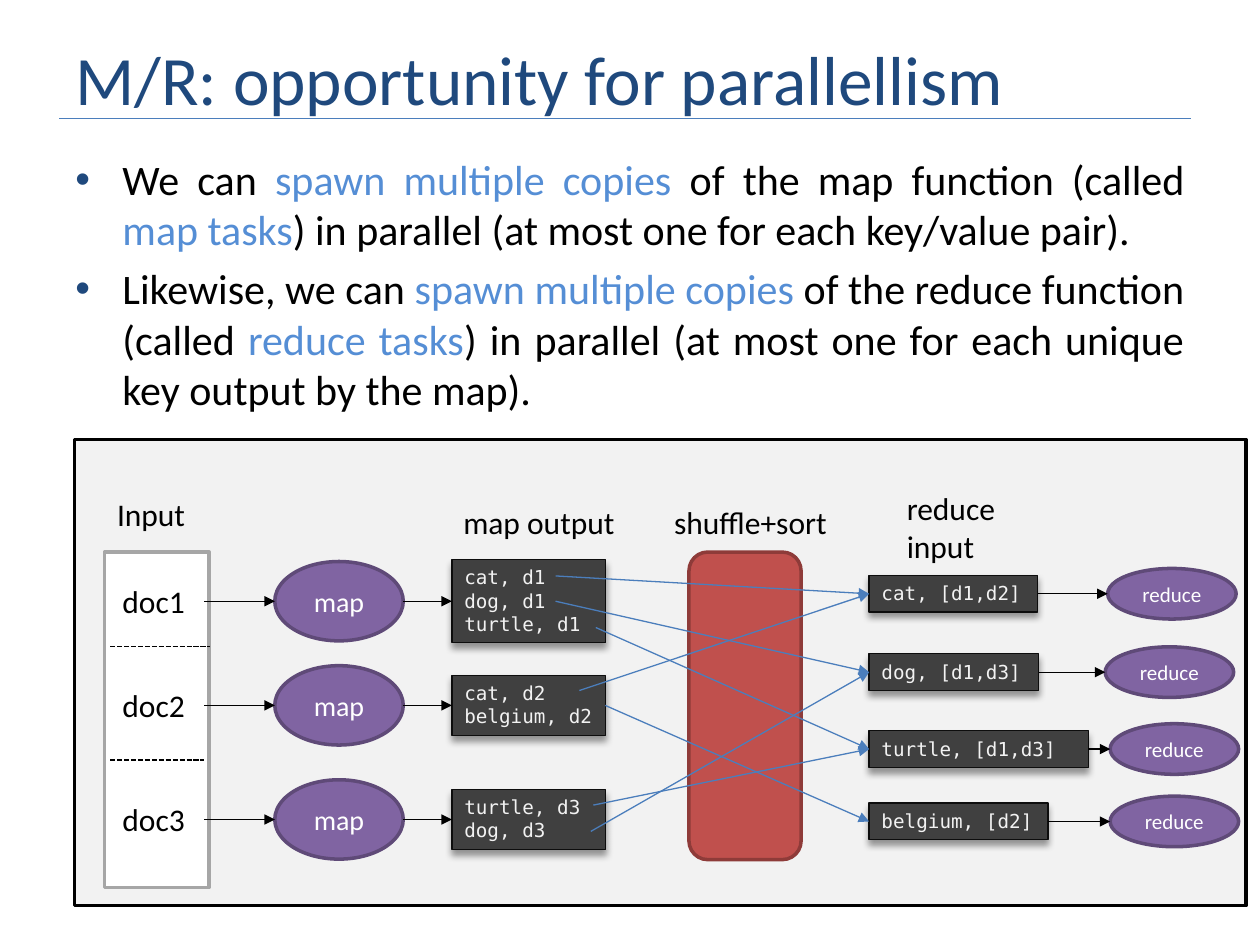
from dataclasses import dataclass
from typing import NamedTuple

from lxml.etree import SubElement
from pptx import Presentation
from pptx.dml.color import RGBColor
from pptx.enum.dml import MSO_LINE
from pptx.enum.shapes import MSO_CONNECTOR, MSO_SHAPE as Preset
from pptx.enum.text import MSO_ANCHOR as Anchor, MSO_AUTO_SIZE as AutoSize, PP_ALIGN as Align
from pptx.oxml.ns import qn
from pptx.util import Cm, Pt

BLACK = RGBColor(0x00, 0x00, 0x00)
WHITE = RGBColor(0xFF, 0xFF, 0xFF)
NAVY = RGBColor(0x1F, 0x49, 0x7D)
SKY = RGBColor(0x55, 0x8E, 0xD5)
BLUE = RGBColor(0x4B, 0x7E, 0xBC)
PALE = RGBColor(0xF2, 0xF2, 0xF2)
GREY = RGBColor(0xA6, 0xA6, 0xA6)
CHARCOAL = RGBColor(0x40, 0x40, 0x40)
INK = RGBColor(0x0D, 0x0D, 0x0D)
PURPLE = RGBColor(0x80, 0x64, 0xA2)
PLUM = RGBColor(0x5F, 0x4A, 0x78)
RED = RGBColor(0xC0, 0x50, 0x4D)
MAROON = RGBColor(0x8E, 0x3B, 0x39)
SANS, MONO = "Calibri", "DejaVu Sans Mono"


class Box(NamedTuple):
    left: float
    top: float
    width: float
    height: float


class Point(NamedTuple):
    x: float
    y: float


class Emission(NamedTuple):
    start: Point
    reducer: int


@dataclass(frozen=True)
class MapTask:
    doc: str
    middle: float
    pairs: tuple[str, ...]


@dataclass(frozen=True)
class ReduceTask:
    group: str
    middle: float
    group_width: float
    oval_left: float


MAP_TASKS = (
    MapTask("doc1", 12.12, ("cat, d1", "dog, d1", "turtle, d1")),
    MapTask("doc2", 14.22, ("cat, d2", "belgium, d2")),
    MapTask("doc3", 16.52, ("turtle, d3", "dog, d3")),
)
REDUCE_TASKS = (
    ReduceTask("cat, [d1,d2]", 11.97, 3.4, 22.33),
    ReduceTask("dog, [d1,d3]", 13.55, 3.42, 22.28),
    ReduceTask("turtle, [d1,d3]", 15.1, 4.42, 22.38),
    ReduceTask("belgium, [d2]", 16.56, 3.61, 22.38),
)
EMISSIONS = (
    Emission(Point(11.2, 11.61), 0),
    Emission(Point(11.2, 12.12), 1),
    Emission(Point(12.01, 12.65), 2),
    Emission(Point(11.68, 13.92), 0),
    Emission(Point(12.2, 14.22), 3),
    Emission(Point(11.96, 16.23), 2),
    Emission(Point(11.91, 16.76), 1),
)
HEADINGS = (
    (Box(2.11, 9.86, 3.81, 1.02), ("Input",)),
    (Box(9.09, 10.01, 4.19, 1.02), ("map output",)),
    (Box(13.34, 10.01, 4.19, 1.02), ("shuffle+sort",)),
    (Box(18.03, 9.73, 2.54, 1.8), ("reduce", "input")),
)
BULLETS = (
    (("We can ", BLACK), ("spawn multiple copies ", SKY), ("of the map function (called ", BLACK),
     ("map tasks", SKY), (") in parallel (at most one for each key/value pair).", BLACK)),
    (("Likewise, we can ", BLACK), ("spawn multiple copies", SKY),
     (" of the reduce function (called ", BLACK), ("reduce tasks", SKY),
     (") in parallel (at most one for each unique key output by the map).", BLACK)),
)
DOC_LEFT, DOC_EDGE = 2.22, 4.12
MAP_LEFT, OVAL_WIDTH, MAP_HEIGHT, REDUCE_HEIGHT = 5.54, 2.59, 1.6, 1.02
PAIRS_LEFT, PAIRS_WIDTH, GROUP_LEFT = 9.11, 3.1, 17.52


def add_run(paragraph, text: str, size: float, color: RGBColor, font: str = SANS) -> None:
    run = paragraph.add_run()
    run.text = text
    run.font.size, run.font.name = Pt(size), font
    run.font.color.rgb = color


def add_text(slide, box: Box):
    frame = slide.shapes.add_textbox(*map(Cm, box)).text_frame
    frame.word_wrap = True
    return frame


def add_label(slide, box: Box, lines: tuple[str, ...]) -> None:
    frame = add_text(slide, box)
    frame.auto_size = AutoSize.SHAPE_TO_FIT_TEXT
    paragraph = frame.paragraphs[0]
    for index, line in enumerate(lines):
        if index:
            paragraph.add_line_break()
        add_run(paragraph, line, 18, BLACK)


def add_block(slide, preset, box: Box, fill: RGBColor, edge: RGBColor, weight: float = 2):
    block = slide.shapes.add_shape(preset, *map(Cm, box))
    block.shadow.inherit = False
    block.fill.solid()
    block.fill.fore_color.rgb = fill
    block.line.color.rgb = edge
    block.line.width = Pt(weight)
    return block


def add_oval(slide, left: float, middle: float, height: float, text: str, size: float) -> None:
    box = Box(left, middle - height / 2, OVAL_WIDTH, height)
    frame = add_block(slide, Preset.OVAL, box, PURPLE, PLUM).text_frame
    frame.vertical_anchor = Anchor.MIDDLE
    frame.paragraphs[0].alignment = Align.CENTER
    add_run(frame.paragraphs[0], text, size, WHITE)


def add_record(slide, left: float, middle: float, width: float, lines: tuple[str, ...]) -> None:
    height = 0.74 + 0.47 * (len(lines) - 1)
    box = Box(left, middle - height / 2, width, height)
    record = add_block(slide, Preset.RECTANGLE, box, CHARCOAL, INK, 0.75)
    effects = record._element.spPr.find(qn("a:effectLst"))
    shadow = SubElement(effects, qn("a:outerShdw"), blurRad=str(Pt(4)), dist=str(Pt(3)),
                        dir="5400000", rotWithShape="0")
    color = SubElement(shadow, qn("a:srgbClr"), val=str(BLACK))
    SubElement(color, qn("a:alpha"), val="40000")
    frame = record.text_frame
    frame.word_wrap = True
    frame.auto_size = AutoSize.SHAPE_TO_FIT_TEXT
    frame.vertical_anchor = Anchor.TOP
    for index, line in enumerate(lines):
        paragraph = frame.add_paragraph() if index else frame.paragraphs[0]
        paragraph.alignment = Align.LEFT
        add_run(paragraph, line, 11, PALE, MONO)


def add_line(slide, start: Point, end: Point, color: RGBColor, weight: float = 0.75):
    line = slide.shapes.add_connector(MSO_CONNECTOR.STRAIGHT, *map(Cm, start + end))
    line.line.color.rgb = color
    line.line.width = Pt(weight)
    SubElement(line._element.spPr, qn("a:effectLst"))
    return line


def add_arrow(slide, start: Point, end: Point, color: RGBColor = BLACK) -> None:
    arrow = add_line(slide, start, end, color)
    SubElement(arrow.line._get_or_add_ln(), qn("a:tailEnd"), type="triangle")


def add_bullet(paragraph, runs) -> None:
    paragraph.alignment = Align.JUSTIFY
    paragraph.space_before = Pt(4.8)
    props = paragraph._p.get_or_add_pPr()
    props.set("marL", str(Cm(0.95)))
    props.set("indent", str(Cm(-0.95)))
    SubElement(SubElement(props, qn("a:buClr")), qn("a:srgbClr"), val=str(NAVY))
    SubElement(props, qn("a:buFont"), typeface="Arial")
    SubElement(props, qn("a:buChar"), char="•")
    for text, color in runs:
        add_run(paragraph, text, 24, color)


def main() -> None:
    """Build the slide on parallelism in map/reduce."""
    deck = Presentation()
    deck.slide_width, deck.slide_height = Cm(25.4), Cm(19.05)
    slide = deck.slides.add_slide(deck.slide_layouts[6])

    add_line(slide, Point(1.19, 2.39), Point(24, 2.39), BLUE)
    title = add_text(slide, Box(1.27, 0.76, 22.86, 1.63))
    title.vertical_anchor = Anchor.MIDDLE
    add_run(title.paragraphs[0], "M/R: opportunity for parallellism", 39.6, NAVY)
    body = add_text(slide, Box(1.27, 2.97, 22.86, 5.7))
    for index, runs in enumerate(BULLETS):
        add_bullet(body.add_paragraph() if index else body.paragraphs[0], runs)

    add_block(slide, Preset.RECTANGLE, Box(1.5, 8.86, 23.62, 9.4), PALE, BLACK)
    add_block(slide, Preset.RECTANGLE, Box(2.11, 11.13, 2.11, 6.76), WHITE, GREY)
    add_block(slide, Preset.ROUNDED_RECTANGLE, Box(13.89, 11.13, 2.26, 6.2), RED, MAROON)
    for box, lines in HEADINGS:
        add_label(slide, box, lines)
    for y, right in ((13.03, 4.24), (15.32, 4.11)):
        divider = add_line(slide, Point(DOC_LEFT, y), Point(right, y), BLACK, 1)
        divider.line.dash_style = MSO_LINE.SQUARE_DOT

    for task in MAP_TASKS:
        y = task.middle
        add_label(slide, Box(DOC_LEFT, y - 0.51, 1.9, 1.02), (task.doc,))
        add_oval(slide, MAP_LEFT, y, MAP_HEIGHT, "map", 16)
        add_record(slide, PAIRS_LEFT, y, PAIRS_WIDTH, task.pairs)
        add_arrow(slide, Point(DOC_EDGE, y), Point(MAP_LEFT, y))
        add_arrow(slide, Point(MAP_LEFT + OVAL_WIDTH, y), Point(PAIRS_LEFT, y))
    for task in REDUCE_TASKS:
        y = task.middle
        add_record(slide, GROUP_LEFT, y, task.group_width, (task.group,))
        add_oval(slide, task.oval_left, y, REDUCE_HEIGHT, "reduce", 12)
        add_arrow(slide, Point(GROUP_LEFT + task.group_width, y), Point(task.oval_left, y))
    for start, reducer in EMISSIONS:
        add_arrow(slide, start, Point(GROUP_LEFT, REDUCE_TASKS[reducer].middle), BLUE)

    deck.save("out.pptx")


if __name__ == "__main__":
    main()
